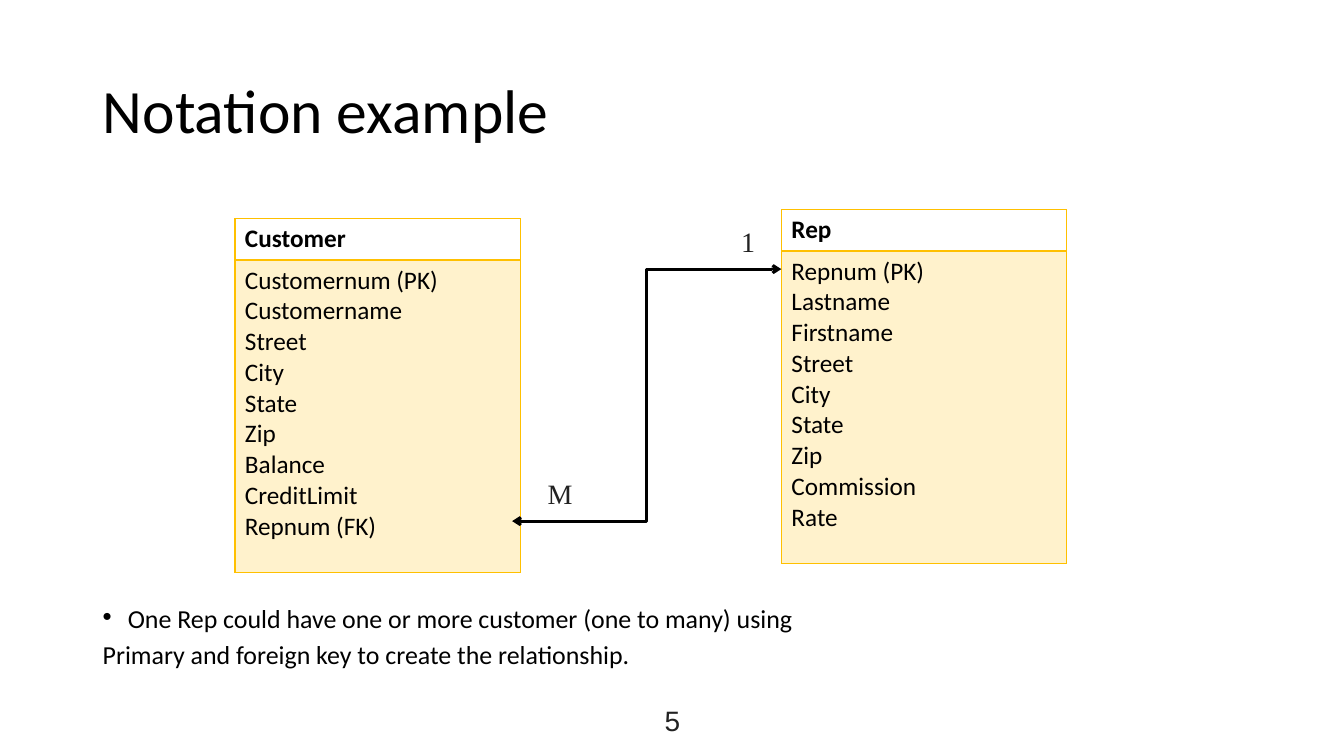
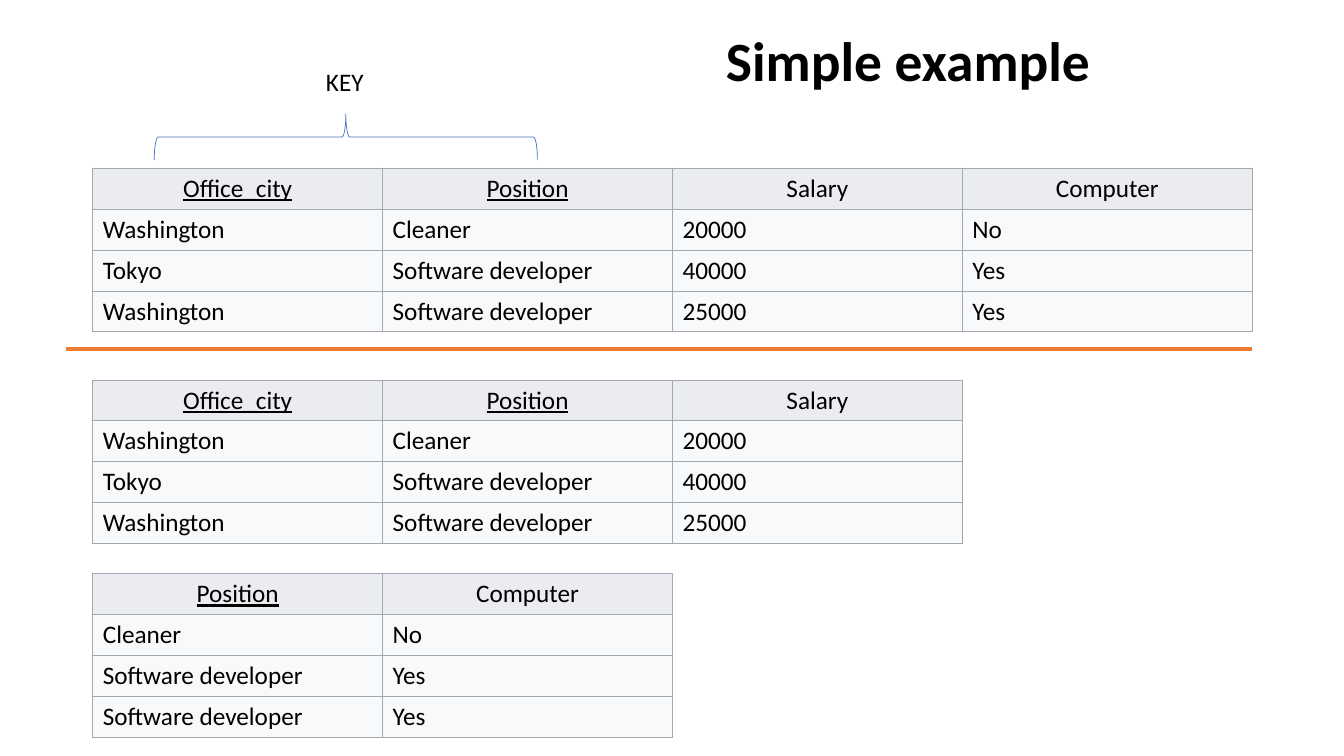
from lxml import etree
from pptx import Presentation
from pptx.dml.color import RGBColor
from pptx.enum.shapes import MSO_CONNECTOR as CONNECTOR, MSO_SHAPE as SHAPE
from pptx.enum.text import MSO_ANCHOR as ANCHOR, MSO_AUTO_SIZE as AUTO_SIZE, PP_ALIGN as ALIGN
from pptx.oxml.ns import qn
from pptx.util import Inches, Pt

FONT = "Calibri"
BLACK = "000000"
DARK = "222222"
GOLD = "FFC000"
PALE_GOLD = "FFF2CC"
GREY = "A2A9B1"
HEADER_GREY = "EAECF0"
ROW_GREY = "F8F9FA"
ORANGE = "ED7D31"
BLUE = "4472C4"

TITLE_ONLY = 5
LEFT = 0.92
COLUMN_WIDTH = 11.5 / 4
ROW_HEIGHT = 0.4
KEYS_BOTH = ("Office_city", "Position")
OFFICES = [
    ("Office_city", "Position", "Salary", "Computer"),
    ("Washington", "Cleaner", "20000", "No"),
    ("Tokyo", "Software developer", "40000", "Yes"),
    ("Washington", "Software developer", "25000", "Yes"),
]


def color(hex_string):
    return RGBColor.from_string(hex_string)


def format_text(text_frame, size, font=FONT, text_color=BLACK, bold=False,
                underline=False, align=ALIGN.LEFT):
    for paragraph in text_frame.paragraphs:
        paragraph.alignment = align
        for run in paragraph.runs:
            run.font.name = font
            run.font.size = Pt(size)
            run.font.bold = bold
            run.font.underline = underline
            run.font.color.rgb = color(text_color)


def add_titled_slide(presentation, text, box, size, bold=False):
    slide = presentation.slides.add_slide(presentation.slide_layouts[TITLE_ONLY])
    title = slide.shapes.title
    title.left, title.top, title.width, title.height = map(Inches, box)
    frame = title.text_frame
    frame.text = text
    frame.auto_size = AUTO_SIZE.NONE
    frame.vertical_anchor = ANCHOR.MIDDLE
    frame.paragraphs[0].line_spacing = 0.9
    format_text(frame, size, bold=bold)
    return slide


def add_label(slide, text, box, size, font=FONT, text_color=BLACK):
    frame = slide.shapes.add_textbox(*map(Inches, box)).text_frame
    frame.text = text
    frame.word_wrap = False
    frame.vertical_anchor = ANCHOR.MIDDLE
    format_text(frame, size, font, text_color, align=ALIGN.CENTER)


def add_note(slide, lines, box):
    """Add lines of body text, the first of them with a bullet."""
    frame = slide.shapes.add_textbox(*map(Inches, box)).text_frame
    frame.text = "\n".join(lines)
    frame.word_wrap = True
    frame.vertical_anchor = ANCHOR.BOTTOM
    format_text(frame, 18.5)
    for paragraph in frame.paragraphs:
        paragraph.line_spacing = 0.7
        paragraph.space_before = Pt(10)
    properties = frame.paragraphs[0]._p.get_or_add_pPr()
    properties.set("marL", str(Inches(0.25)))
    properties.set("indent", str(-Inches(0.25)))
    etree.SubElement(properties, qn("a:buFont"), typeface="Arial")
    etree.SubElement(properties, qn("a:buChar"), char="•")


def set_borders(cell, line_color, width, bottom=None):
    properties = cell._tc.get_or_add_tcPr()
    for index, side in enumerate("LRTB"):
        points = bottom if side == "B" and bottom else width
        line = etree.Element(qn(f"a:ln{side}"), w=str(Pt(points)))
        fill = etree.SubElement(line, qn("a:solidFill"))
        etree.SubElement(fill, qn("a:srgbClr"), val=line_color)
        properties.insert(index, line)


def add_plain_table(slide, left, top, column_widths, row_heights):
    """Add a table without banding and return it."""
    table = slide.shapes.add_table(
        len(row_heights), len(column_widths), Inches(left), Inches(top),
        Inches(sum(column_widths)), Inches(sum(row_heights))).table
    table.first_row = table.horz_banding = False
    for column, width in zip(table.columns, column_widths):
        column.width = Inches(width)
    for row, height in zip(table.rows, row_heights):
        row.height = Inches(height)
    return table


def fill_cell(cell, fill_color):
    cell.fill.solid()
    cell.fill.fore_color.rgb = color(fill_color)


def add_entity(slide, name, fields, left, top):
    table = add_plain_table(slide, left, top, [2.83], [0.41, 3.1])
    header, body = table.cell(0, 0), table.cell(1, 0)
    header.text_frame.text = name
    header.fill.background()
    format_text(header.text_frame, 18, bold=True)
    set_borders(header, GOLD, 1, bottom=2)
    body.text_frame.text = "\n".join(fields)
    fill_cell(body, PALE_GOLD)
    format_text(body.text_frame, 18)
    set_borders(body, GOLD, 1)


def add_relation(slide, rows, keys, top):
    """Add a data table whose key column names are underlined."""
    table = add_plain_table(slide, LEFT, top, [COLUMN_WIDTH] * len(rows[0]),
                            [ROW_HEIGHT] * len(rows))
    for row_index, row in enumerate(rows):
        is_header = row_index == 0
        for column_index, text in enumerate(row):
            cell = table.cell(row_index, column_index)
            cell.text_frame.text = text
            cell.vertical_anchor = ANCHOR.MIDDLE
            fill_cell(cell, HEADER_GREY if is_header else ROW_GREY)
            format_text(cell.text_frame, 18, underline=is_header and text in keys,
                        align=ALIGN.CENTER if is_header else ALIGN.LEFT)
            set_borders(cell, GREY, 0.75)


def add_line(slide, kind, start, end, line_color, width, arrows=False):
    connector = slide.shapes.add_connector(kind, *map(Inches, start + end))
    connector.line.color.rgb = color(line_color)
    connector.line.width = Pt(width)
    if arrows:
        line = connector.line._get_or_add_ln()
        for tag in ("a:headEnd", "a:tailEnd"):
            etree.SubElement(line, qn(tag), type="arrow")
    etree.SubElement(connector._element.spPr, qn("a:effectLst"))


def add_key_brace(slide):
    brace = slide.shapes.add_shape(
        SHAPE.LEFT_BRACE, Inches(3.2), Inches(-0.54), Inches(0.46), Inches(3.8))
    brace.rotation = 90
    brace.shadow.inherit = False
    brace.fill.background()
    brace.line.color.rgb = color(BLUE)
    brace.line.width = Pt(0.5)


def build_notation_slide(presentation):
    slide = add_titled_slide(presentation, "Notation example", (LEFT, 0.4, 11.5, 1.45), 44)
    add_note(slide, ["One Rep could have one or more customer (one to many) using",
                     "Primary and foreign key to create the relationship."],
             (LEFT, 5.9, 11.5, 0.78))
    add_label(slide, "5", (4.42, 6.95, 4.5, 0.4), 20, "Arial", DARK)
    add_entity(slide, "Customer",
               ["Customernum (PK)", "Customername", "Street", "City", "State", "Zip",
                "Balance", "CreditLimit", "Repnum (FK)"], 2.33, 2.17)
    add_entity(slide, "Rep",
               ["Repnum (PK)", "Lastname", "Firstname", "Street", "City", "State", "Zip",
                "Commission", "Rate"], 7.75, 2.08)
    add_line(slide, CONNECTOR.ELBOW, (7.75, 2.67), (5.08, 5.17), BLACK, 2, arrows=True)
    add_label(slide, "1", (7.25, 2.17, 0.34, 0.44), 20, "Times New Roman", DARK)
    add_label(slide, "M", (5.33, 4.67, 0.45, 0.44), 20, "Times New Roman", DARK)


def build_simple_slide(presentation):
    slide = add_titled_slide(presentation, "Simple example", (7.1, 0.34, 4.27, 0.59), 39.6,
                             bold=True)
    add_relation(slide, OFFICES, KEYS_BOTH, 1.67)
    add_relation(slide, [row[:3] for row in OFFICES], KEYS_BOTH, 3.77)
    add_relation(slide, [(row[1], row[3]) for row in OFFICES], ("Position",), 5.69)
    add_line(slide, CONNECTOR.STRAIGHT, (0.65, 3.46), (12.42, 3.46), ORANGE, 3)
    add_key_brace(slide)
    add_label(slide, "KEY", (3.13, 0.61, 0.58, 0.4), 18)


def main():
    presentation = Presentation()
    presentation.slide_width = Inches(13.33)
    presentation.slide_height = Inches(7.5)
    build_notation_slide(presentation)
    build_simple_slide(presentation)
    presentation.save("out.pptx")


if __name__ == "__main__":
    main()
